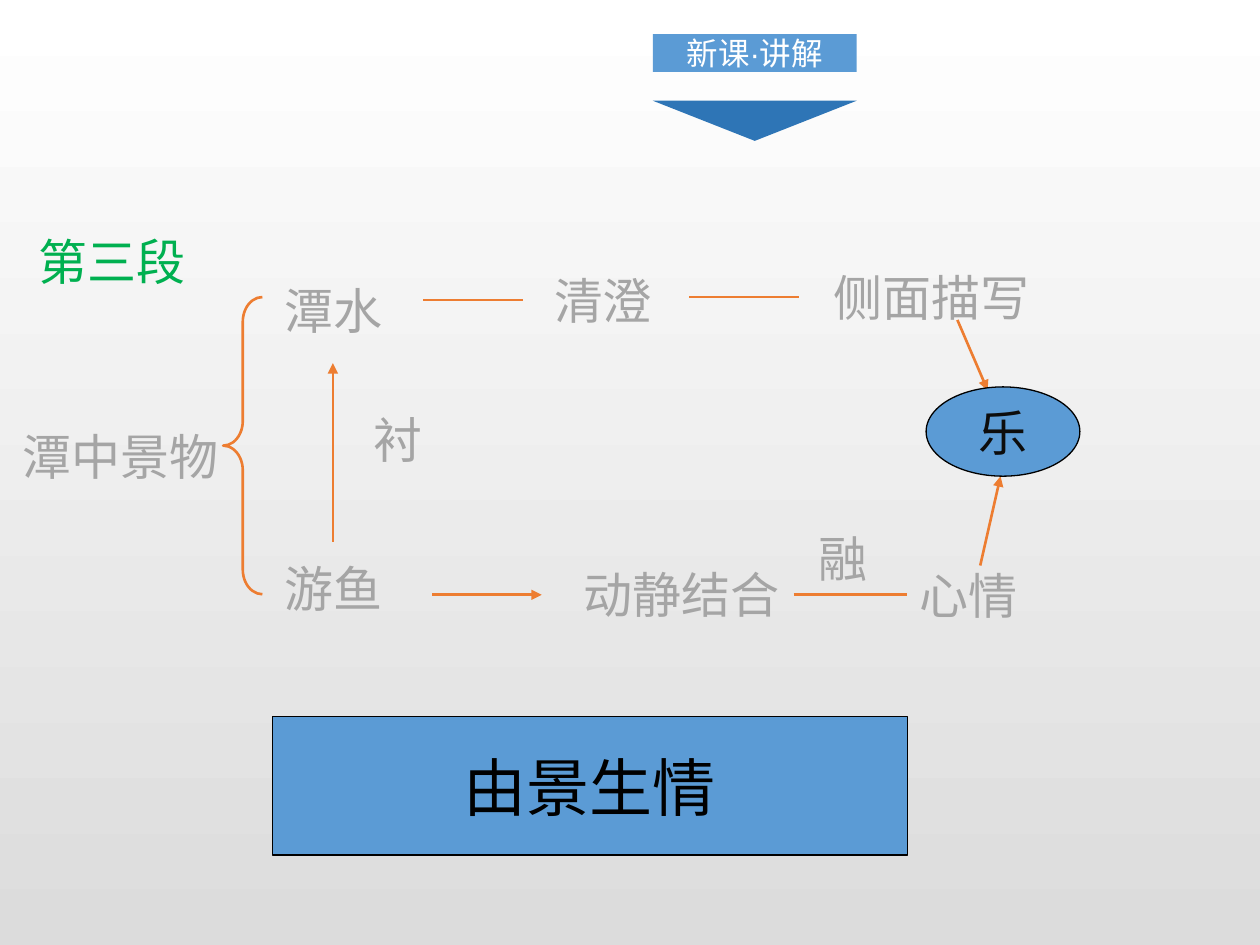
import pptx
import pptx.util
import pptx.dml.color
import pptx.enum.shapes
import pptx.enum.text
import pptx.oxml.ns
import lxml.etree

Cm, Pt = pptx.util.Cm, pptx.util.Pt
SHAPES = pptx.enum.shapes.MSO_SHAPE
ALIGN = pptx.enum.text.PP_ALIGN
ANCHOR = pptx.enum.text.MSO_ANCHOR
qn = pptx.oxml.ns.qn

COLORS = {
    "white": "FFFFFF", "mist": "DCDCDC", "grey": "A5A5A5", "green": "00B050",
    "orange": "ED7D31", "blue": "5B9BD5", "navy": "2E75B6",
    "black": "000000", "ink": "0D0D0D",
}
RGB = {name: pptx.dml.color.RGBColor.from_string(code) for name, code in COLORS.items()}
CJK = "Noto Sans CJK SC"


def write(shape, words, color, size=28, font=CJK, align=ALIGN.LEFT, **frame_format):
    frame = shape.text_frame
    for name, value in frame_format.items():
        setattr(frame, name, value)
    paragraph = frame.paragraphs[0]
    paragraph.alignment = align
    run = paragraph.add_run()
    run.text = words
    for name, value in {"name": font, "size": Pt(size)}.items():
        setattr(run.font, name, value)
    run.font.color.rgb = RGB[color]
    lxml.etree.SubElement(run.font._element, qn("a:ea"), typeface=CJK)


def draw(parent, kind, box, fill=None, line=None, width=0.75):
    shape = parent.add_shape(kind, *map(Cm, box))
    shape.shadow.inherit = False
    if fill:
        shape.fill.solid()
        shape.fill.fore_color.rgb = RGB[fill]
    else:
        shape.fill.background()
    if line:
        shape.line.color.rgb = RGB[line]
        shape.line.width = Pt(width)
    else:
        shape.line.fill.background()
    return shape


deck = pptx.Presentation()
for name, value in {"slide_width": Cm(25.4), "slide_height": Cm(19.05)}.items():
    setattr(deck, name, value)
slide = deck.slides.add_slide(deck.slide_layouts[6])

backdrop = slide.background.fill
backdrop.gradient()
backdrop.gradient_angle = 270
for stop, color in zip(backdrop.gradient_stops, ("white", "mist")):
    stop.color.rgb = RGB[color]

terms = [
    ("潭中景物", 0.2, 8.48, 4.9, "grey"),
    ("第三段", 0.53, 4.55, 3.81, "green"),
    ("潭水", 5.49, 5.54, 2.87, "grey"),
    ("游鱼", 5.49, 11.13, 2.87, "grey"),
    ("清澄", 10.92, 5.33, 2.62, "grey"),
    ("侧面描写", 16.56, 5.26, 4.5, "grey"),
    ("动静结合", 11.51, 11.25, 4.5, "grey"),
    ("融", 16.26, 10.52, 1.75, "grey"),
    ("心情", 18.29, 11.28, 2.62, "grey"),
]
for words, left, top, width, color in terms:
    term = slide.shapes.add_textbox(Cm(left), Cm(top), Cm(width), Cm(1.45))
    write(term, words, color, word_wrap=True)

contrast = slide.shapes.add_textbox(Cm(7.01), Cm(8.13), Cm(1.7), Cm(1.8))
write(contrast, "衬", "grey", word_wrap=True)
contrast.text_frame._txBody.bodyPr.set("vert", "eaVert")

scenery_brace = draw(slide.shapes, SHAPES.LEFT_BRACE, (4.5, 5.99, 0.79, 5.99),
                     line="orange", width=1.5)
scenery_brace.adjustments[0] = 0.63

links = [
    (6.71, 10.92, 6.71, 7.32, True),
    (8.53, 6.05, 10.54, 6.05, False),
    (13.89, 5.99, 16.1, 5.99, False),
    (8.71, 11.99, 10.92, 11.99, True),
    (16, 11.99, 18.29, 11.99, False),
    (19.3, 6.45, 19.91, 7.87, True),
    (19.76, 11.4, 20.17, 9.6, True),
]
for *ends, pointed in links:
    link = slide.shapes.add_connector(pptx.enum.shapes.MSO_CONNECTOR.STRAIGHT, *map(Cm, ends))
    link.line.color.rgb = RGB["orange"]
    link.line.width = Pt(1.5)
    if pointed:
        lxml.etree.SubElement(link.line._get_or_add_ln(), qn("a:tailEnd"), type="triangle")
    lxml.etree.SubElement(link._element.spPr, qn("a:effectLst"))

centred = {"align": ALIGN.CENTER, "vertical_anchor": ANCHOR.MIDDLE, "word_wrap": False}
joy = draw(slide.shapes, SHAPES.OVAL, (18.67, 7.8, 3.1, 1.8), "blue", "black")
write(joy, "乐", "ink", **centred)
summary = draw(slide.shapes, SHAPES.RECTANGLE, (5.49, 14.45, 12.8, 2.79), "blue", "black")
write(summary, "由景生情", "black", size=36, **centred)

heading = slide.shapes.add_group_shape()
banner = draw(heading.shapes, SHAPES.RECTANGLE, (13.16, 0.69, 4.11, 0.76), "blue")
no_margins = {f"margin_{side}": 0 for side in ("left", "top", "right", "bottom")}
write(banner, "新课·讲解", "white", size=18, font="Arial",
      **{**centred, **no_margins, "word_wrap": True})
pointer = draw(heading.shapes, SHAPES.ISOSCELES_TRIANGLE, (13.16, 2.03, 4.11, 0.81), "navy")
pointer.rotation = 180

deck.save("out.pptx")
